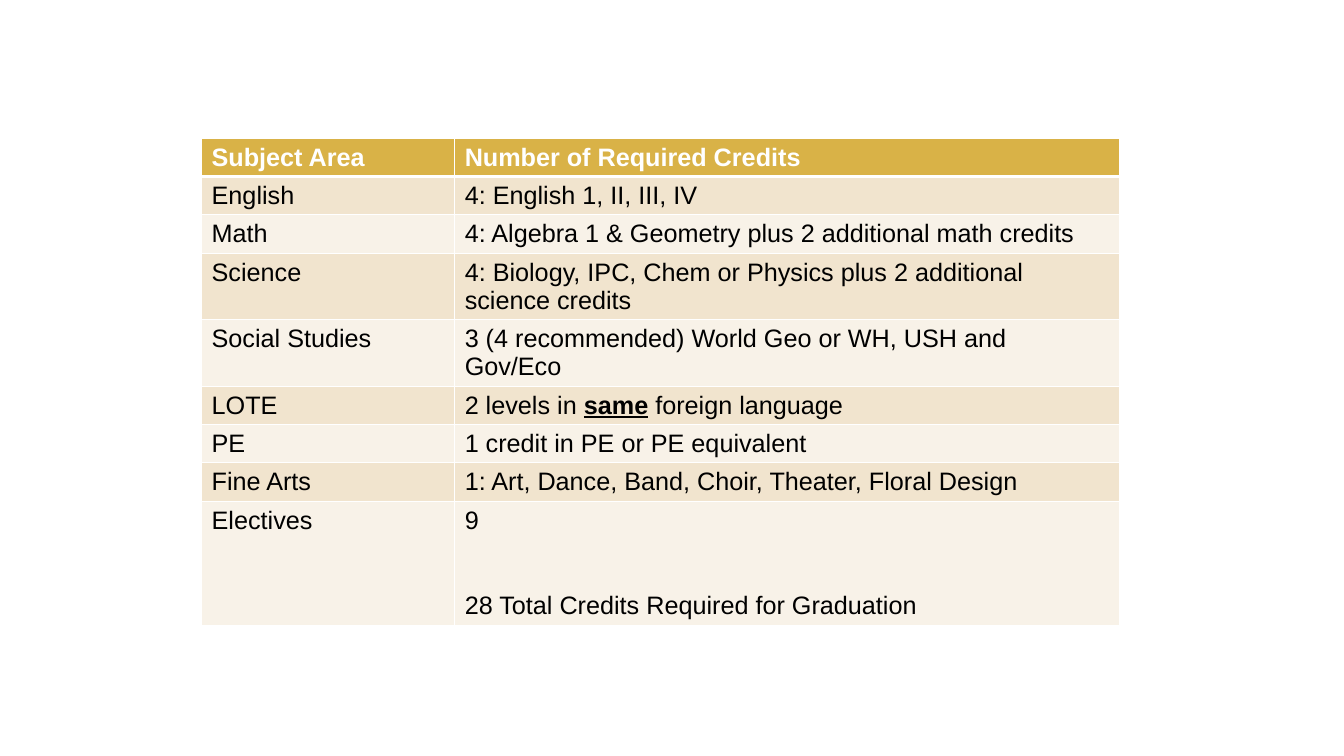
from dataclasses import dataclass

from lxml.etree import SubElement
from pptx import Presentation
from pptx.dml.color import RGBColor
from pptx.oxml.ns import qn
from pptx.util import Inches, Pt

FONT = "Arial"
WHITE, BLACK = "FFFFFF", "000000"
GOLD, SAND, CREAM = "D9B247", "F1E4CE", "F8F2E8"
SLIDE_W, SLIDE_H = Inches(13.33), Inches(7.5)


@dataclass(frozen=True)
class Run:
    text: str
    strong: bool = False


@dataclass(frozen=True)
class Line:
    runs: tuple[Run, ...]
    before: float = 0


@dataclass(frozen=True)
class Requirement:
    subject: str
    credits: tuple[Line, ...]


def line(*texts: str, before: float = 0) -> Line:
    return Line(tuple(Run(t) for t in texts), before)


REQUIREMENTS = [
    Requirement("Subject Area", (line("Number of Required Credits"),)),
    Requirement("English", (line("4: English 1, II, III, IV"),)),
    Requirement("Math", (line("4: Algebra 1 & Geometry plus 2 additional math credits"),)),
    Requirement("Science", (line("4: Biology, IPC, Chem or Physics plus 2 additional science credits"),)),
    Requirement("Social Studies", (line("3 (4 recommended) World Geo or WH, USH and Gov/Eco"),)),
    Requirement("LOTE", (Line((Run("2 levels in "), Run("same", True), Run(" foreign language"))),)),
    Requirement("PE", (line("1 credit in PE or PE equivalent"),)),
    Requirement("Fine Arts", (line("1: Art, Dance, Band, Choir, Theater, Floral Design"),)),
    Requirement("Electives", (line("9"), line("28 Total Credits Required for Graduation", before=41))),
]


def across(percent: float) -> int:
    return round(SLIDE_W * percent / 100)


def down(percent: float) -> int:
    return round(SLIDE_H * percent / 100)


def rgb(color: str) -> RGBColor:
    return RGBColor.from_string(color)


def add_text(p, text: str, *, size: float = 18, color: str = BLACK,
             bold: bool = False, underline: bool = False) -> None:
    r = p.add_run()
    r.text = text
    r.font.name = FONT
    r.font.size = Pt(size)
    r.font.bold = bold
    r.font.underline = underline
    r.font.color.rgb = rgb(color)


def set_borders(cell, color: str, bottom: float) -> None:
    tcPr = cell._tc.get_or_add_tcPr()
    widths = {"a:lnL": 1, "a:lnR": 1, "a:lnT": 1, "a:lnB": bottom}
    for tag, width in widths.items():
        ln = SubElement(tcPr, qn(tag), w=str(Pt(width)))
        fill = SubElement(ln, qn("a:solidFill"))
        SubElement(fill, qn("a:srgbClr"), val=color)


def fill_cell(cell, lines: tuple[Line, ...], fill: str, header: bool) -> None:
    set_borders(cell, WHITE, 3 if header else 1)
    cell.fill.solid()
    cell.fill.fore_color.rgb = rgb(fill)
    tf = cell.text_frame
    for i, item in enumerate(lines):
        p = tf.add_paragraph() if i else tf.paragraphs[0]
        if item.before:
            p.space_before = Pt(item.before)
        for run in item.runs:
            add_text(p, run.text, color=WHITE if header else BLACK,
                     bold=header or run.strong, underline=run.strong)


def add_credit_table(s) -> None:
    widths = [across(18.83), across(49.44)]
    row_h = down(3.87)
    n = len(REQUIREMENTS)
    table = s.shapes.add_table(n, len(widths), across(15), down(18.27),
                               sum(widths), row_h * n).table
    table.horz_banding = False
    for column, width in zip(table.columns, widths):
        column.width = width
    for i, item in enumerate(REQUIREMENTS):
        header = i == 0
        fill = GOLD if header else (CREAM, SAND)[i % 2]
        for j, lines in enumerate(((line(item.subject),), item.credits)):
            fill_cell(table.cell(i, j), lines, fill, header)


def main() -> None:
    prs = Presentation()
    prs.slide_width, prs.slide_height = SLIDE_W, SLIDE_H
    s = prs.slides.add_slide(prs.slide_layouts[6])
    add_credit_table(s)
    prs.save("out.pptx")


if __name__ == "__main__":
    main()
